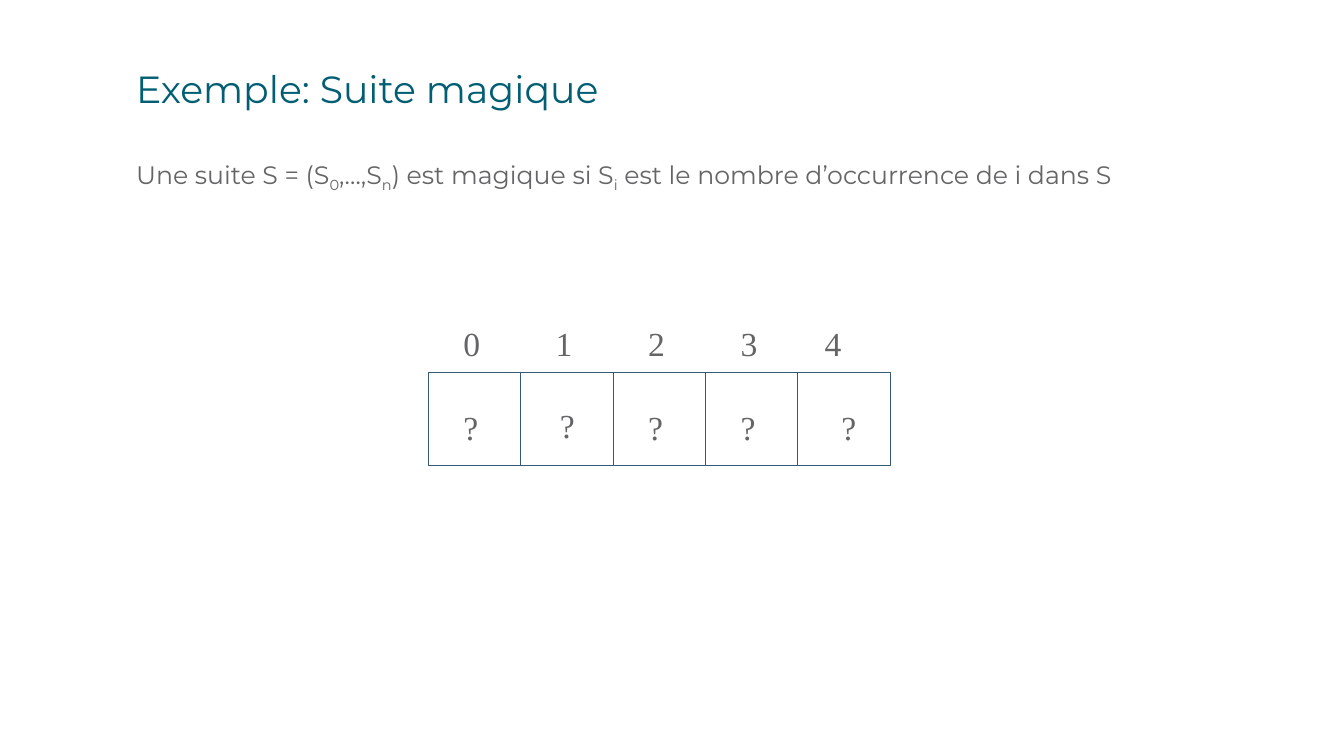
from pptx import Presentation, util as u
from pptx.dml.color import RGBColor
from pptx.enum import shapes, text
from pptx.oxml.ns import qn

Pt = u.Pt
TITLE = "Exemple: Suite magique"
# (text, is subscript)
DEFINITION = [
    ("Une suite S = (S", False), ("0", True), (",…,S", False), ("n", True),
    (") est magique si S", False), ("i", True),
    (" est le nombre d’occurrence de i dans S", False),
]
# (index, its left edge, mark, its left edge, its top edge)
CELLS = [
    ("0", 331, "?", 331, 287),
    ("1", 397, "?", 400, 286),
    ("2", 463, "?", 463, 287),
    ("3", 529, "?", 529, 287),
    ("4", 589, "?", 601, 287),
]
TEAL, GREY, WHITE, EDGE = "025E73", "656567", "FFFFFF", "335B74"
ROW_LEFT, ROW_TOP, CELL = 306, 266.4, 66
INDEX_TOP = 227.2


def color(hex_code):
    return RGBColor.from_string(hex_code)


def write(shape, runs, size, ink, font, margins, spacing=1.0):
    """Fill a shape with one left-aligned paragraph of (text, is subscript) runs."""
    frame = shape.text_frame
    frame.word_wrap = True
    frame.auto_size = text.MSO_AUTO_SIZE.NONE
    frame.vertical_anchor = text.MSO_ANCHOR.TOP
    frame.margin_left, frame.margin_top, frame.margin_right, frame.margin_bottom = map(Pt, margins)
    paragraph = frame.paragraphs[0]
    paragraph.alignment = text.PP_ALIGN.LEFT
    paragraph.line_spacing = spacing
    paragraph.space_before = Pt(0)
    for words, is_subscript in runs:
        run = paragraph.add_run()
        run.text = words
        run.font.size, run.font.name = Pt(size), font
        run.font.color.rgb = color(ink)
        if is_subscript:
            run.font._element.set("baseline", "-25000")
    return paragraph


def place(shape, left, top, width, height):
    shape.left, shape.top, shape.width, shape.height = map(Pt, (left, top, width, height))


def symbol(slide, words, left, top):
    box = slide.shapes.add_textbox(Pt(left), Pt(top), Pt(30), Pt(36))
    write(box, [(words, False)], size=24, ink=GREY, font="Times New Roman",
          margins=(0, 3.6, 0, 3.6))


def main():
    deck = Presentation()
    deck.slide_width, deck.slide_height = Pt(960), Pt(540)
    slide = deck.slides.add_slide(deck.slide_layouts[1])

    title, definition = slide.placeholders
    place(title, 90, 46.8, 828, 54)
    write(title, [(TITLE, False)], size=27, ink=TEAL, font="Montserrat",
          margins=(7.2, 3.6, 7.2, 3.6), spacing=0.9)
    place(definition, 90, 106.6, 828, 34)
    sentence = write(definition, DEFINITION, size=18, ink=GREY, font="Montserrat",
                     margins=(7.2, 7.2, 7.2, 7.2), spacing=0.9)
    properties = sentence._p.get_or_add_pPr()
    properties.set("marL", "0")
    properties.set("indent", "0")
    properties.append(properties.makeelement(qn("a:buNone"), {}))

    for column, (index, index_left, mark, mark_left, mark_top) in enumerate(CELLS):
        cell = slide.shapes.add_shape(
            shapes.MSO_SHAPE.RECTANGLE, Pt(ROW_LEFT + column * CELL), Pt(ROW_TOP), Pt(CELL), Pt(CELL))
        cell.shadow.inherit = False
        cell.fill.solid()
        cell.fill.fore_color.rgb = color(WHITE)
        cell.line.color.rgb = color(EDGE)
        cell.line.width = Pt(0.75)
        symbol(slide, mark, mark_left, mark_top)
        symbol(slide, index, index_left, INDEX_TOP)

    deck.save("out.pptx")


if __name__ == "__main__":
    main()
